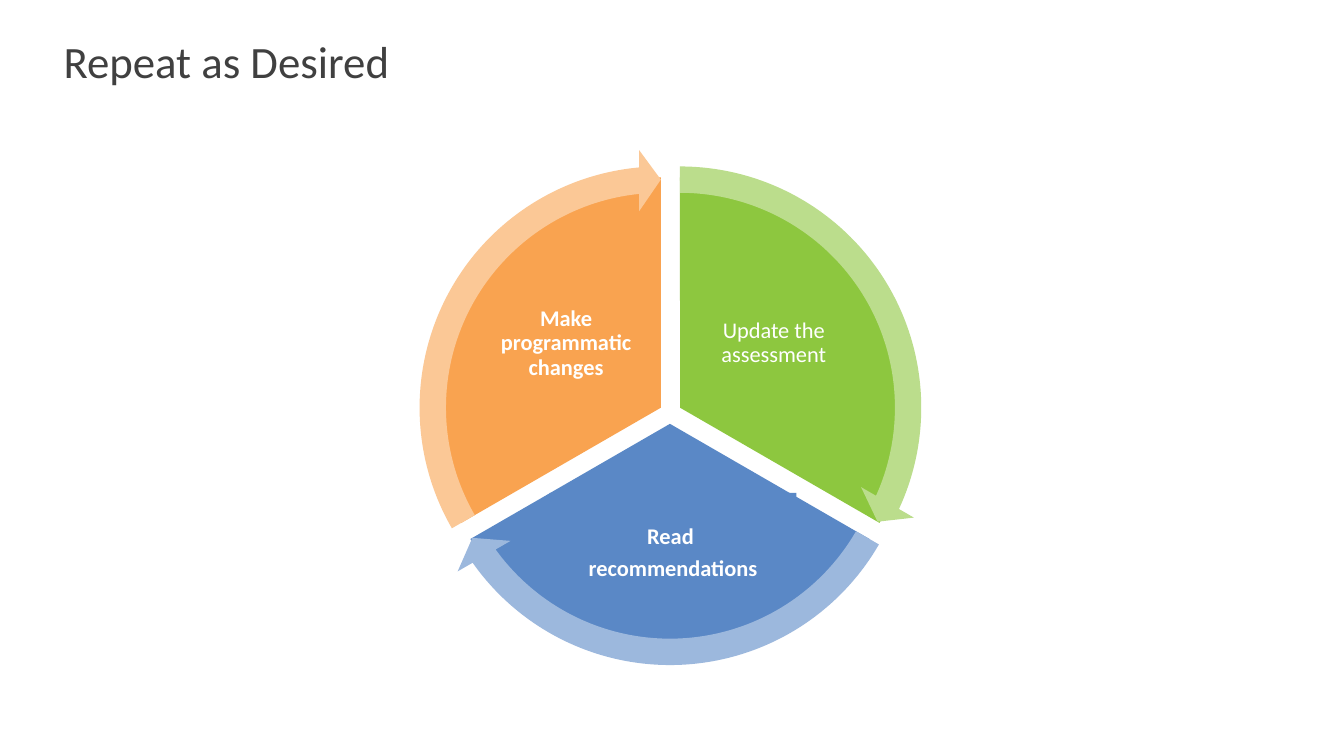
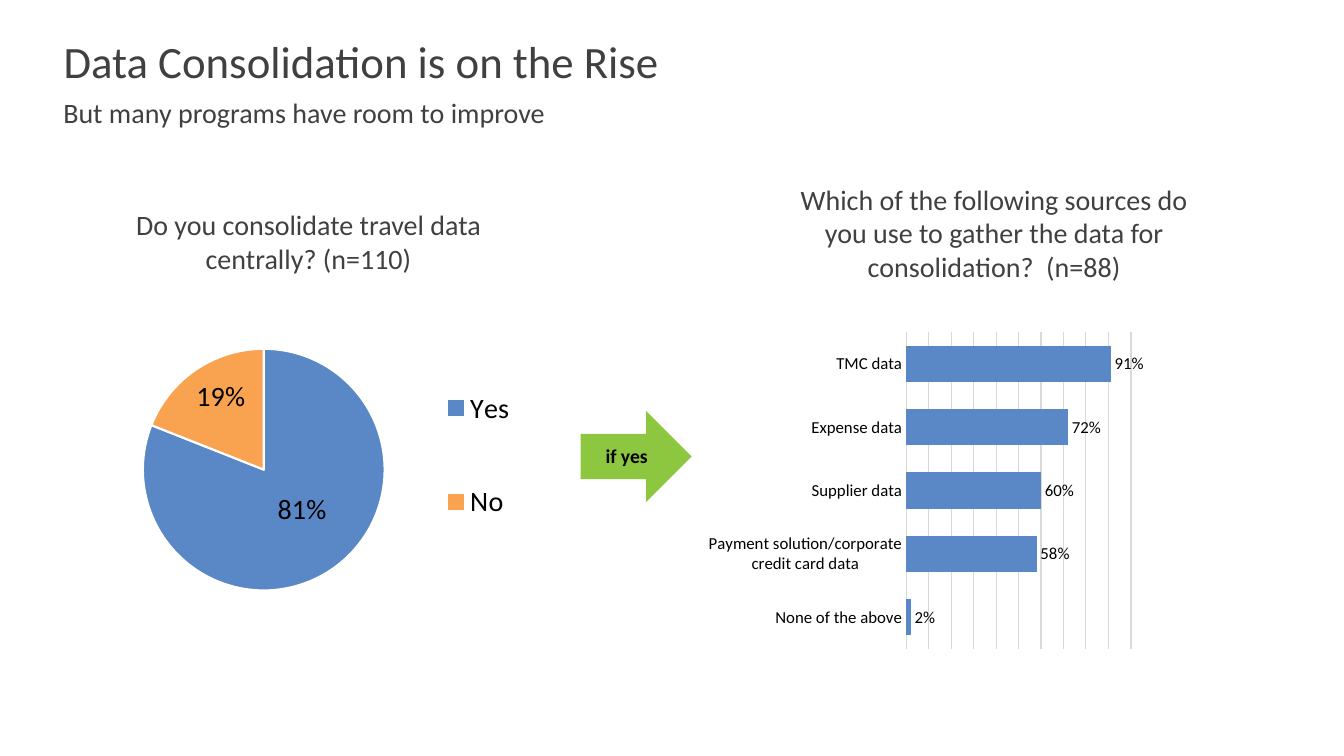
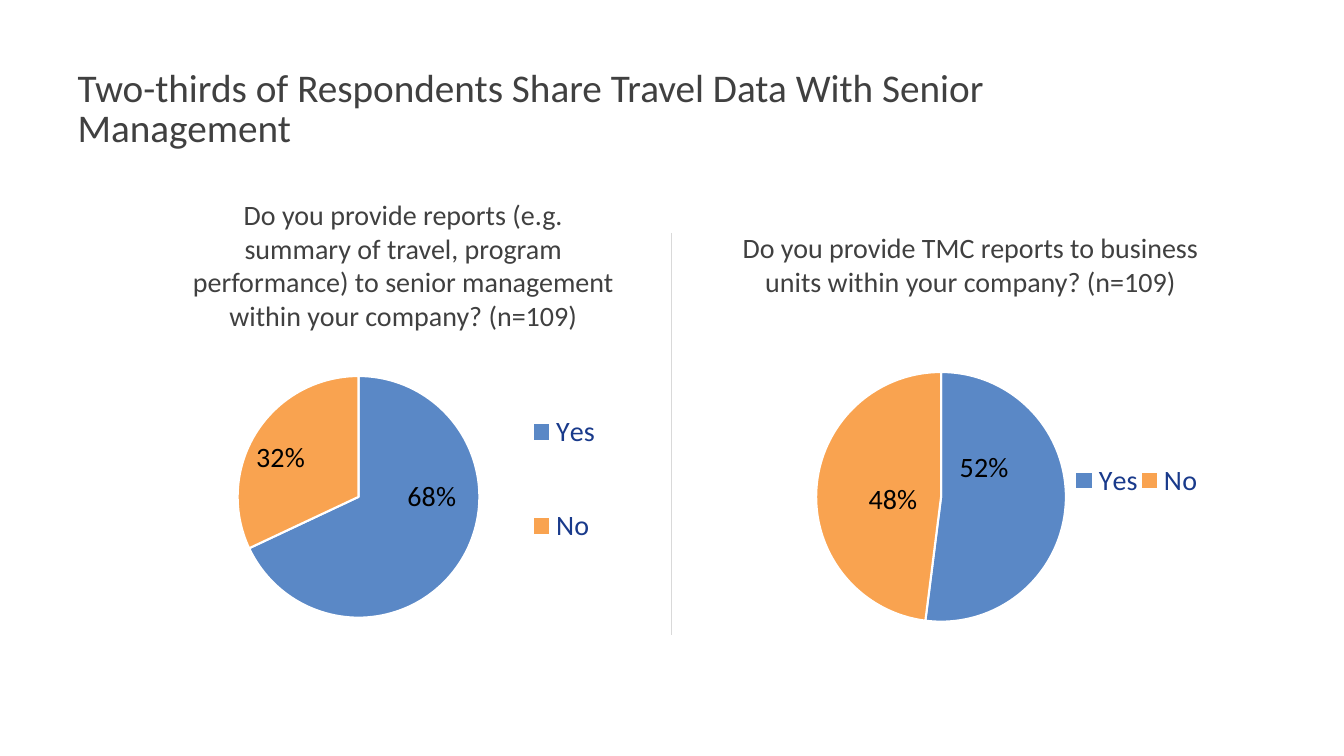
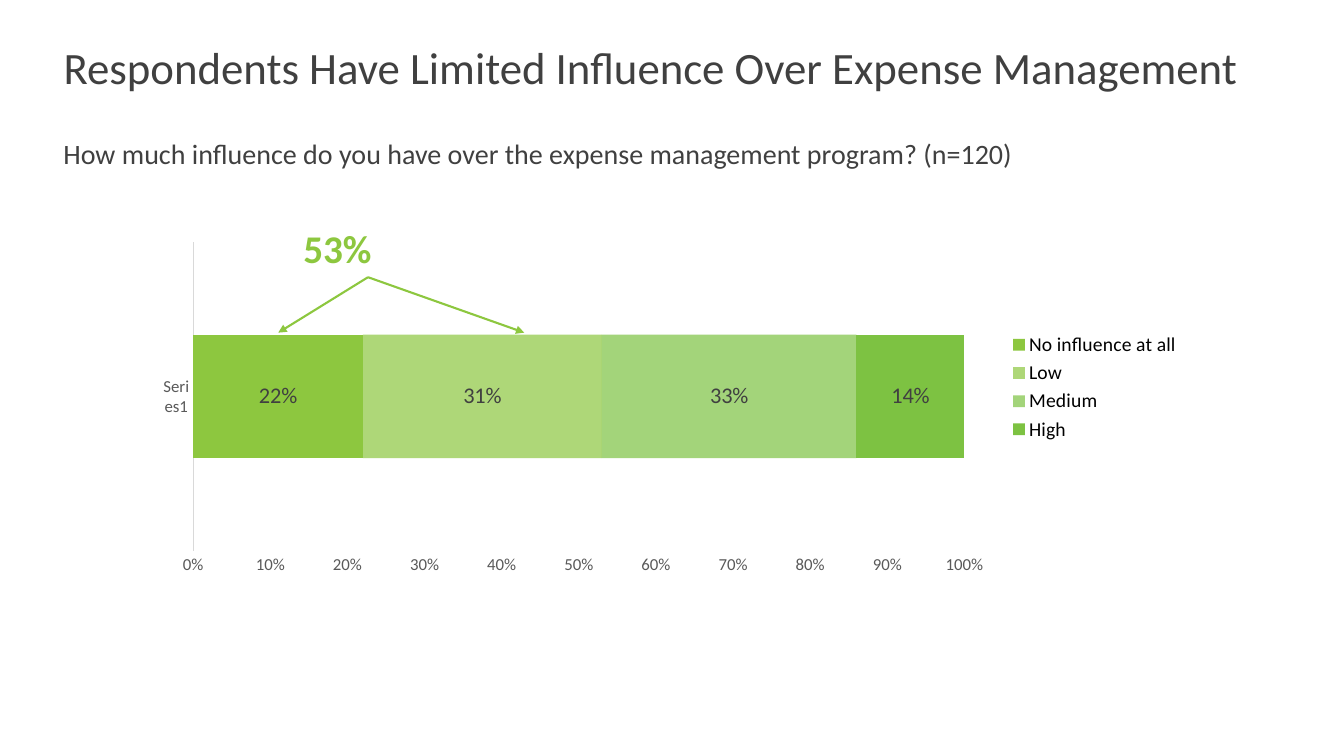
from dataclasses import dataclass
from typing import Any, Optional

from lxml.etree import SubElement
from pptx import Presentation
from pptx.chart.data import CategoryChartData
from pptx.dml.color import RGBColor
from pptx.enum.chart import XL_CHART_TYPE, XL_LABEL_POSITION, XL_LEGEND_POSITION, XL_TICK_MARK
from pptx.enum.shapes import MSO_CONNECTOR, MSO_SHAPE
from pptx.enum.text import MSO_ANCHOR, MSO_AUTO_SIZE, PP_ALIGN
from pptx.oxml import parse_xml
from pptx.oxml.ns import nsdecls, qn
from pptx.util import Emu, Pt

# Shared look
FONT = "Calibri"
INK, BLACK, WHITE, NAVY = "404040", "000000", "FFFFFF", "193A8B"
GREY, AXIS_GREY = "D9D9D9", "595959"
BLUE, ORANGE, GREEN, LEAF = "5A88C6", "F9A350", "8DC73F", "7DC242"
PX_TO_EMU = 9144
TITLE_BOX = (53, 32, 1227, 60)
TITLE_ONLY = 5

Box = tuple[int, int, int, int]
Fractions = tuple[float, float, float, float]


@dataclass(frozen=True)
class TextStyle:
    size: int = 20
    color: str = INK
    bold: bool = False
    align: Any = PP_ALIGN.LEFT
    anchor: Any = MSO_ANCHOR.TOP
    spacing: float = 1.0
    after: float = 0
    insets: Box = (10, 5, 10, 5)


@dataclass(frozen=True)
class Wedge:
    lines: list[str]
    center: tuple[int, int]
    label_box: Box
    start: int
    end: int
    color: str
    arrow_color: str
    bold: bool = True


@dataclass(frozen=True)
class YesNoPie:
    question: str
    question_box: Box
    chart_box: Box
    yes: float
    no: float
    plot: Fractions
    legend: Fractions
    label_offsets: list[tuple[float, float]]
    legend_color: str = BLACK


@dataclass(frozen=True)
class InfluenceLevel:
    name: str
    share: float
    color: str
    alpha: Optional[int] = None


QUESTION = TextStyle(align=PP_ALIGN.CENTER)
SUBTITLE = TextStyle(spacing=0.85)


# Basic helpers
def px(value: int) -> Emu:
    return Emu(value * PX_TO_EMU)


def place(box: Box) -> tuple[Emu, ...]:
    return tuple(px(value) for value in box)


def rgb(color: str) -> RGBColor:
    return RGBColor.from_string(color)


def set_all(target: Any, values: dict[str, Any]) -> None:
    for name, value in values.items():
        setattr(target, name, value)


def set_font(font: Any, size: int, color: str, bold: bool = False) -> None:
    set_all(font, {"name": FONT, "size": Pt(size), "bold": bold})
    font.color.rgb = rgb(color)


def set_fill(part: Any, color: str, alpha: Optional[int] = None) -> None:
    part.fill.solid()
    part.fill.fore_color.rgb = rgb(color)
    if alpha is not None:
        # The colour element sits inside the solid fill just made
        tint = part.fill._xPr.find(qn("a:solidFill"))[0]
        SubElement(tint, qn("a:alpha")).set("val", str(alpha * 1000))


def set_line(line: Any, color: str, width: float) -> None:
    line.color.rgb = rgb(color)
    line.width = Pt(width)


def write(frame: Any, lines: list[str], style: TextStyle) -> None:
    left, top, right, bottom = place(style.insets)
    set_all(frame, {
        "text": "\n".join(lines), "word_wrap": True, "auto_size": MSO_AUTO_SIZE.NONE,
        "vertical_anchor": style.anchor, "margin_left": left, "margin_top": top,
        "margin_right": right, "margin_bottom": bottom,
    })
    for paragraph in frame.paragraphs:
        set_all(paragraph, {"alignment": style.align, "line_spacing": style.spacing,
                            "space_before": Pt(0), "space_after": Pt(style.after)})
        for run in paragraph.runs:
            set_font(run.font, style.size, style.color, style.bold)


def add_text(slide: Any, box: Box, text: str, style: TextStyle) -> None:
    write(slide.shapes.add_textbox(*place(box)).text_frame, [text], style)


def add_shape(slide: Any, preset: Any, box: Box, color: str,
              adjustments: tuple[float, ...] = ()) -> Any:
    shape = slide.shapes.add_shape(preset, *place(box))
    shape.shadow.inherit = False
    set_fill(shape, color)
    shape.line.fill.background()
    for index, value in enumerate(adjustments):
        shape.adjustments[index] = value
    return shape


def add_line(slide: Any, start: tuple[int, int], end: tuple[int, int], color: str,
             width: float, arrow: bool = False) -> None:
    line = slide.shapes.add_connector(MSO_CONNECTOR.STRAIGHT, *place(start + end))
    set_line(line.line, color, width)
    if arrow:
        SubElement(line.line._get_or_add_ln(), qn("a:tailEnd")).set("type", "triangle")
    SubElement(line._element.spPr, qn("a:effectLst"))


def add_slide(deck: Any, title: str, box: Box = TITLE_BOX, size: int = 32) -> Any:
    slide = deck.slides.add_slide(deck.slide_layouts[TITLE_ONLY])
    heading = slide.shapes.title
    set_all(heading, dict(zip(("left", "top", "width", "height"), place(box))))
    write(heading.text_frame, [title],
          TextStyle(size=size, anchor=MSO_ANCHOR.BOTTOM, spacing=0.85))
    return slide


# Chart helpers
def manual_layout(values: tuple[float, ...], inner: bool = False, edge: bool = True) -> Any:
    target = '<c:layoutTarget val="inner"/>' if inner else ""
    modes = '<c:xMode val="edge"/><c:yMode val="edge"/>' if edge else ""
    sizes = "".join(f'<c:{key} val="{value}"/>' for key, value in zip("xywh", values))
    return parse_xml(f'<c:layout {nsdecls("c")}><c:manualLayout>'
                     f"{target}{modes}{sizes}</c:manualLayout></c:layout>")


def insert_layout(parent: Any, index: int, layout: Any) -> None:
    for old in parent.findall(qn("c:layout")):
        parent.remove(old)
    parent.insert(index, layout)


def add_chart(slide: Any, kind: Any, box: Box, categories: list[str],
              series: list[tuple[str, list[float]]], plot: Fractions, size: int) -> Any:
    data = CategoryChartData(number_format="0%")
    data.categories = categories
    for name, values in series:
        data.add_series(name, values)
    chart = slide.shapes.add_chart(kind, *place(box), data).chart
    set_all(chart, {"has_title": False, "has_legend": False})
    set_font(chart.font, size, BLACK)
    insert_layout(chart.element.find(".//" + qn("c:plotArea")), 0,
                  manual_layout(plot, inner=True))
    return chart


def add_labels(series: Any, size: int, color: str, position: Any) -> None:
    labels = series.data_labels
    set_all(labels, {"show_value": True, "number_format": "0%",
                     "number_format_is_linked": False, "position": position})
    set_font(labels.font, size, color)


def add_legend(chart: Any, size: int, color: str, layout: Optional[Fractions] = None) -> None:
    chart.has_legend = True
    set_all(chart.legend, {"position": XL_LEGEND_POSITION.RIGHT, "include_in_layout": False})
    set_font(chart.legend.font, size, color)
    if layout:
        insert_layout(chart.element.find(".//" + qn("c:legend")), 1, manual_layout(layout))


def style_bar_axes(chart: Any, color: str) -> None:
    shares, names = chart.value_axis, chart.category_axis
    set_all(shares, {"minimum_scale": 0, "maximum_scale": 1, "major_unit": 0.1})
    set_all(shares.tick_labels, {"number_format": "0%", "number_format_is_linked": False})
    for axis in (shares, names):
        set_all(axis, {"major_tick_mark": XL_TICK_MARK.NONE,
                       "minor_tick_mark": XL_TICK_MARK.NONE})
        set_font(axis.tick_labels.font, 12, color)
    set_line(names.format.line, GREY, 0.75)


def add_yes_no_pie(slide: Any, pie: YesNoPie) -> None:
    chart = add_chart(slide, XL_CHART_TYPE.PIE, pie.chart_box, ["Yes", "No "],
                      [("Series 1", [pie.yes, pie.no])], pie.plot, 20)
    chart.plots[0].vary_by_categories = True
    answers = chart.plots[0].series[0]
    add_labels(answers, 20, BLACK, XL_LABEL_POSITION.CENTER)
    for index, color in enumerate((BLUE, ORANGE)):
        point = answers.points[index]
        set_fill(point.format, color)
        set_line(point.format.line, WHITE, 1.5)
        point.data_label.position = XL_LABEL_POSITION.CENTER
        set_font(point.data_label.font, 20, BLACK)
    for label, offset in zip(chart.element.iter(qn("c:dLbl")), pie.label_offsets):
        insert_layout(label, 1, manual_layout(offset, edge=False))
    add_legend(chart, 20, pie.legend_color, pie.legend)
    add_text(slide, pie.question_box, pie.question, QUESTION)


# Slide 1: cycle of three wedges
WEDGES = [
    Wedge(["Update the assessment"], (674, 404), (686, 273, 163, 136), 270, 30,
          GREEN, "BBDD8C", bold=False),
    Wedge(["Read ", "recommendations"], (664, 420), (545, 489, 245, 120), 30, 150,
          BLUE, "9CB8DD"),
    Wedge(["Make programmatic changes"], (655, 404), (480, 273, 163, 136), 150, 270,
          ORANGE, "FBC896"),
]


def square_around(center: tuple[int, int], size: int) -> Box:
    return center[0] - size // 2, center[1] - size // 2, size, size


def angle(degrees: float) -> float:
    return degrees * 0.6


def cycle_slide(deck: Any) -> None:
    slide = add_slide(deck, "Repeat as Desired")
    for wedge in WEDGES:
        add_shape(slide, MSO_SHAPE.PIE, square_around(wedge.center, 457), wedge.color,
                  (angle(wedge.start), angle(wedge.end)))
        label = add_shape(slide, MSO_SHAPE.RECTANGLE, wedge.label_box, wedge.color)
        write(label.text_frame, wedge.lines,
              TextStyle(16, WHITE, wedge.bold, PP_ALIGN.CENTER, MSO_ANCHOR.MIDDLE,
                        0.9, 5.6, (0, 5, 0, 5)))
    head = 5.46
    for wedge in WEDGES:
        add_shape(slide, MSO_SHAPE.CIRCULAR_ARROW, square_around(wedge.center, 513),
                  wedge.arrow_color,
                  (0.051, angle(head), angle(wedge.end - head), angle(wedge.start), 0.059))


# Slide 2: consolidation pie leading to data sources
SOURCES = {
    "None of the above": 0.02,
    "Payment solution/corporate credit card data": 0.58,
    "Supplier data": 0.6,
    "Expense data": 0.72,
    "TMC data": 0.91,
}
CONSOLIDATION = YesNoPie(
    "Do you consolidate travel data centrally? (n=110)", (84, 201, 444, 77),
    (84, 303, 444, 326), 0.81, 0.19, (0.13, 0.13, 0.54, 0.74), (0.77, 0.08, 0.22, 0.75),
    [(0.01, -0.03), (-0.02, -0.07)])


def consolidation_slide(deck: Any) -> None:
    slide = add_slide(deck, "Data Consolidation is on the Rise")
    add_text(slide, (53, 95, 1244, 60), "But many programs have room to improve", SUBTITLE)
    add_yes_no_pie(slide, CONSOLIDATION)
    add_shape(slide, MSO_SHAPE.RIGHT_ARROW, (576, 408, 110, 90), GREEN)
    add_text(slide, (577, 435, 89, 34), "if yes",
             TextStyle(14, BLACK, True, PP_ALIGN.CENTER))

    chart = add_chart(slide, XL_CHART_TYPE.BAR_CLUSTERED, (701, 206, 507, 476),
                      list(SOURCES), [("Series 1", list(SOURCES.values()))],
                      (0.39, 0.26, 0.44, 0.66), 12)
    style_bar_axes(chart, BLACK)
    set_all(chart.value_axis, {"visible": False, "has_major_gridlines": True})
    set_line(chart.value_axis.major_gridlines.format.line, GREY, 0.75)
    set_all(chart.plots[0], {"gap_width": 75, "vary_by_categories": False})
    usage = chart.plots[0].series[0]
    set_fill(usage.format, BLUE)
    add_labels(usage, 12, BLACK, XL_LABEL_POSITION.OUTSIDE_END)
    add_text(slide, (764, 176, 444, 111),
             "Which of the following sources do you use to gather the data for "
             "consolidation?  (n=88)", QUESTION)


# Slide 3: two report questions side by side
REPORT_PIES = [
    YesNoPie("Do you provide reports (e.g. summary of travel, program performance) to "
             "senior management within your company? (n=109)", (178, 191, 444, 145),
             (178, 330, 444, 326), 0.68, 0.32, (0.13, 0.13, 0.54, 0.74),
             (0.75, 0.07, 0.22, 0.75), [(0.05, -0.1), (-0.06, -0.02)], NAVY),
    YesNoPie("Do you provide TMC reports to business units within your company? (n=109)",
             (710, 224, 505, 77), (741, 330, 475, 326), 0.52, 0.48,
             (0.14, 0.12, 0.53, 0.76), (0.68, 0.39, 0.28, 0.12),
             [(-0.04, -0.1), (0.03, 0.02)], NAVY),
]


def reports_slide(deck: Any) -> None:
    slide = add_slide(deck, "Two-thirds of Respondents Share Travel Data With Senior "
                      "Management", (67, 48, 1042, 106), 28)
    for pie in REPORT_PIES:
        add_yes_no_pie(slide, pie)
    add_line(slide, (666, 231), (666, 630), GREY, 0.75)


# Slide 4: influence levels in one stacked bar
LEVELS = [
    InfluenceLevel("No influence at all", 0.22, GREEN),
    InfluenceLevel("Low", 0.31, GREEN, 70),
    InfluenceLevel("Medium ", 0.33, LEAF, 70),
    InfluenceLevel("High", 0.14, LEAF),
]


def influence_slide(deck: Any) -> None:
    slide = add_slide(deck, "Respondents Have Limited Influence Over Expense Management",
                      (53, 38, 1227, 60))
    add_text(slide, (53, 136, 1227, 60),
             "How much influence do you have over the expense management program? (n=120)",
             SUBTITLE)
    chart = add_chart(slide, XL_CHART_TYPE.BAR_STACKED_100, (161, 152, 1020, 464),
                      ["Series1"], [(level.name, [level.share]) for level in LEVELS],
                      (0.03, 0.19, 0.75, 0.66), 10)
    style_bar_axes(chart, AXIS_GREY)
    chart.value_axis.has_major_gridlines = False
    chart.value_axis.format.line.fill.background()
    set_all(chart.plots[0], {"gap_width": 150, "overlap": 100, "vary_by_categories": False})
    for series, level in zip(chart.plots[0].series, LEVELS):
        set_fill(series.format, level.color, level.alpha)
        add_labels(series, 16, INK, XL_LABEL_POSITION.CENTER)
    add_legend(chart, 14, BLACK)

    add_text(slide, (291, 218, 174, 57), "53%", TextStyle(28, GREEN, True))
    for bar_point in ((276, 330), (520, 330)):
        add_line(slide, (365, 275), bar_point, GREEN, 1.5, arrow=True)


def main() -> None:
    deck = Presentation()
    set_all(deck, {"slide_width": px(1333), "slide_height": px(750)})
    for build in (cycle_slide, consolidation_slide, reports_slide, influence_slide):
        build(deck)
    deck.save("out.pptx")


if __name__ == "__main__":
    main()
